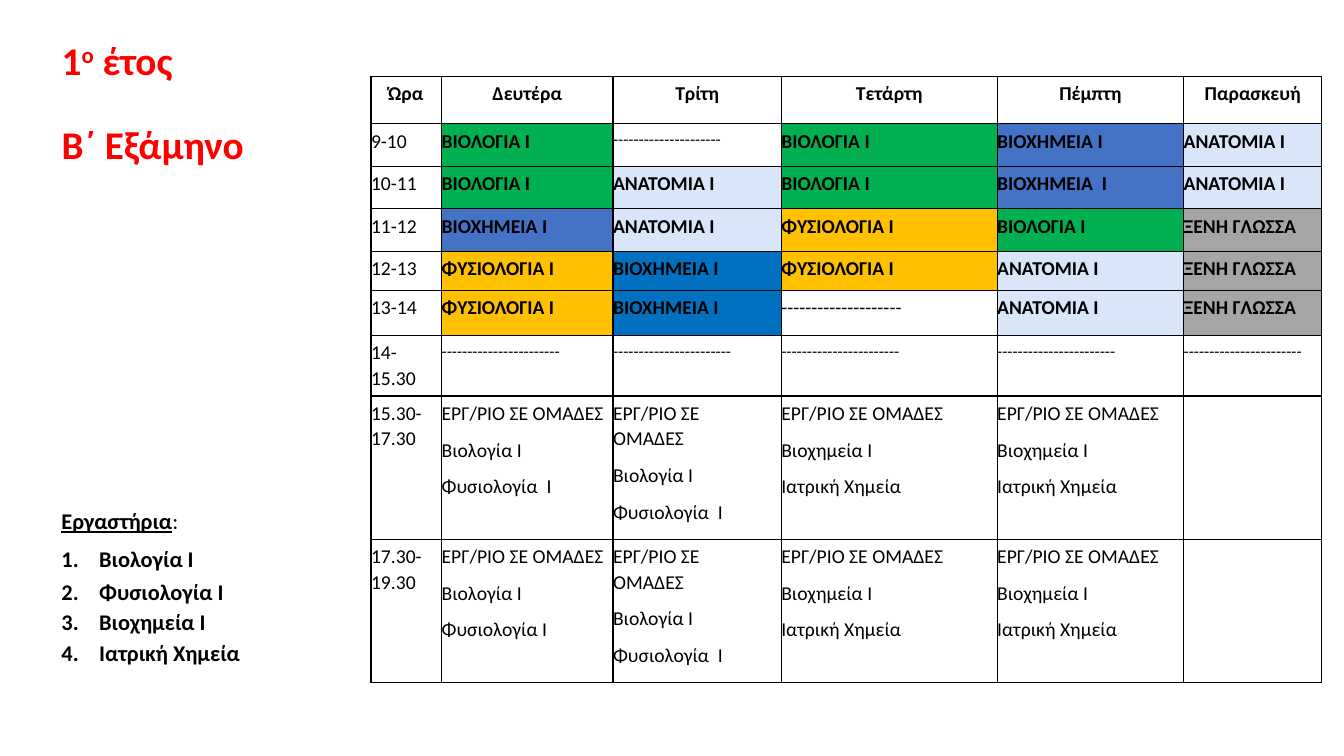
from lxml import etree
from pptx import Presentation
from pptx.dml.color import RGBColor
from pptx.enum.text import MSO_ANCHOR, MSO_AUTO_SIZE, PP_ALIGN
from pptx.oxml.ns import qn
from pptx.util import Cm, Pt

TOP = MSO_ANCHOR.TOP
GROW = MSO_AUTO_SIZE.SHAPE_TO_FIT_TEXT
LEFT, CENTER = PP_ALIGN.LEFT, PP_ALIGN.CENTER

COLUMNS = [1.78, 4.32, 4.24, 5.44, 4.7, 3.48]
ROWS = [1.19, 1.07, 1.07, 1.07, 0.99, 1.14, 1.52, 3.61, 3.61]
DAYS = ["Ώρα", "Δευτέρα", "Τρίτη", "Τετάρτη", "Πέμπτη", "Παρασκευή"]
BIO, CHEM, ANAT = "ΒΙΟΛΟΓΙΑ Ι", "ΒΙΟΧΗΜΕΙΑ Ι", "ΑΝΑΤΟΜΙΑ Ι"
PHYS, LANG = "ΦΥΣΙΟΛΟΓΙΑ Ι", "ΞΕΝΗ ΓΛΩΣΣΑ"
LAB = "ΕΡΓ/ΡΙΟ ΣΕ ΟΜΑΔΕΣ\n"
LAB_BIO = LAB + "Βιολογία Ι\nΦυσιολογία  Ι"
LAB_CHEM = LAB + "Βιοχημεία Ι\nΙατρική Χημεία"
TIMETABLE = [
    DAYS,
    ["9-10", BIO, "-" * 21, BIO, CHEM, ANAT],
    ["10-11", BIO, ANAT, BIO, "ΒΙΟΧΗΜΕΙΑ  Ι", ANAT],
    ["11-12", CHEM, ANAT, PHYS, BIO, LANG],
    ["12-13", PHYS, CHEM, PHYS, ANAT, LANG],
    ["13-14", PHYS, CHEM, "-" * 20, ANAT, LANG],
    ["14-15.30"] + ["-" * 23] * 5,
    ["15.30-17.30", LAB_BIO, LAB_BIO, LAB_CHEM, LAB_CHEM, ""],
    ["17.30- 19.30", LAB + "Βιολογία Ι\nΦυσιολογία Ι", LAB_BIO, LAB_CHEM, LAB_CHEM, ""],
]
FILLS = {"ΒΙΟΛΟΓΙΑ": "00B050", "ΒΙΟΧΗΜΕΙΑ": "4472C4", "ΑΝΑΤΟΜΙΑ": "D9E5F8",
         "ΦΥΣΙΟΛΟΓΙΑ": "FFC000", "ΞΕΝΗ": "A5A5A5"}
TUESDAY, TUESDAY_CHEM = 2, "0070C0"


def rgb(value):
    return RGBColor.from_string(value)


def subject_fill(text, column):
    if text == CHEM and column == TUESDAY:
        return TUESDAY_CHEM
    return FILLS.get(text.split(" ")[0])


class Deck:
    font, ink, accent = "Calibri", "000000", "FF0000"

    def __init__(self):
        self.prs = Presentation()
        self.prs.slide_width, self.prs.slide_height = Cm(33.87), Cm(19.05)
        self.s = self.prs.slides.add_slide(self.prs.slide_layouts[5])

    def style(self, p, size, color, bold, spacing, before=0):
        p.line_spacing, p.space_before, p.space_after = spacing, Pt(before), Pt(0)
        for r in p.runs:
            f = r.font
            f.name, f.size, f.bold = self.font, Pt(size), bold
            f.color.rgb = rgb(color)

    def indent(self, p, left, first=0):
        pPr = p._p.get_or_add_pPr()
        pPr.set("marL", str(Cm(left)))
        pPr.set("indent", str(Cm(first)))
        return pPr

    def title(self, box, year, term):
        sp = self.s.shapes.title
        sp.left, sp.top, sp.width, sp.height = map(Cm, box)
        tf = sp.text_frame
        tf.word_wrap, tf.vertical_anchor, tf.auto_size = True, TOP, GROW
        first, second = tf.paragraphs[0], tf.add_paragraph()
        for text in year:
            first.add_run().text = text
        first.runs[1]._r.get_or_add_rPr().set("baseline", "30000")
        second.text = term
        for p, before in ((first, 0), (second, 30)):
            p.alignment = LEFT
            self.style(p, 28, self.accent, True, 0.9, before)

    def numbered_list(self, box, heading, items):
        tf = self.s.shapes.add_textbox(*map(Cm, box)).text_frame
        tf.word_wrap = True
        p = tf.paragraphs[0]
        for text in (heading, ":"):
            p.add_run().text = text
        self.style(p, 16, self.ink, True, 0.9)
        p.runs[0].font.underline = True
        p.runs[1].font.bold = False
        for text, before in items:
            p = tf.add_paragraph()
            p.text = text
            self.style(p, 16, self.ink, True, 1.1, before)
            pPr = self.indent(p, 0.95, -0.95)
            etree.SubElement(pPr, qn("a:buFont"), typeface="+mj-lt")
            etree.SubElement(pPr, qn("a:buAutoNum"), type="arabicPeriod")

    def borders(self, cell):
        tcPr = cell._tc.get_or_add_tcPr()
        for side in ("lnL", "lnR", "lnT", "lnB"):
            ln = etree.SubElement(tcPr, qn("a:" + side), w=str(Pt(1)))
            fill = etree.SubElement(ln, qn("a:solidFill"))
            etree.SubElement(fill, qn("a:srgbClr"), val=self.ink)

    def cell(self, cell, text, row, column):
        cell.margin_left, cell.margin_top = Cm(0), Cm(0.1)
        cell.margin_right, cell.margin_bottom = Cm(0.18), Cm(0)
        self.borders(cell)
        color = subject_fill(text, column)
        if color:
            cell.fill.solid()
            cell.fill.fore_color.rgb = rgb(color)
        else:
            cell.fill.background()
        cell.text_frame.text = text
        size = 12 if text.startswith("-") and len(text) > 20 else 14
        for i, p in enumerate(cell.text_frame.paragraphs):
            self.style(p, size, self.ink, row == 0 or bool(color), 1.07, 8 if i else 0)
            if row == 0:
                p.alignment = CENTER if column else LEFT
                self.indent(p, 0.18 if column else 0.43)

    def table(self, left, top, columns, rows, data):
        box = map(Cm, (left, top, sum(columns), sum(rows)))
        table = self.s.shapes.add_table(len(rows), len(columns), *box).table
        table.first_row = table.horz_banding = False
        for column, width in zip(table.columns, columns):
            column.width = Cm(width)
        for i, (height, texts) in enumerate(zip(rows, data)):
            table.rows[i].height = Cm(height)
            for j, text in enumerate(texts):
                self.cell(table.cell(i, j), text, i, j)


def main():
    deck = Deck()
    deck.title((1.3, 0.91, 6.63, 3.48), ("1", "ο", " έτος"), "Β΄ Εξάμηνο")
    deck.numbered_list((1.3, 12.73, 9.53, 4.88), "Εργαστήρια", [
        ("Βιολογία Ι", 6), ("Φυσιολογία Ι", 2.2), ("Βιοχημεία Ι", 0.6), ("Ιατρική Χημεία", 0.6)])
    deck.table(9.35, 1.93, COLUMNS, ROWS, TIMETABLE)
    deck.prs.save("out.pptx")


if __name__ == "__main__":
    main()
